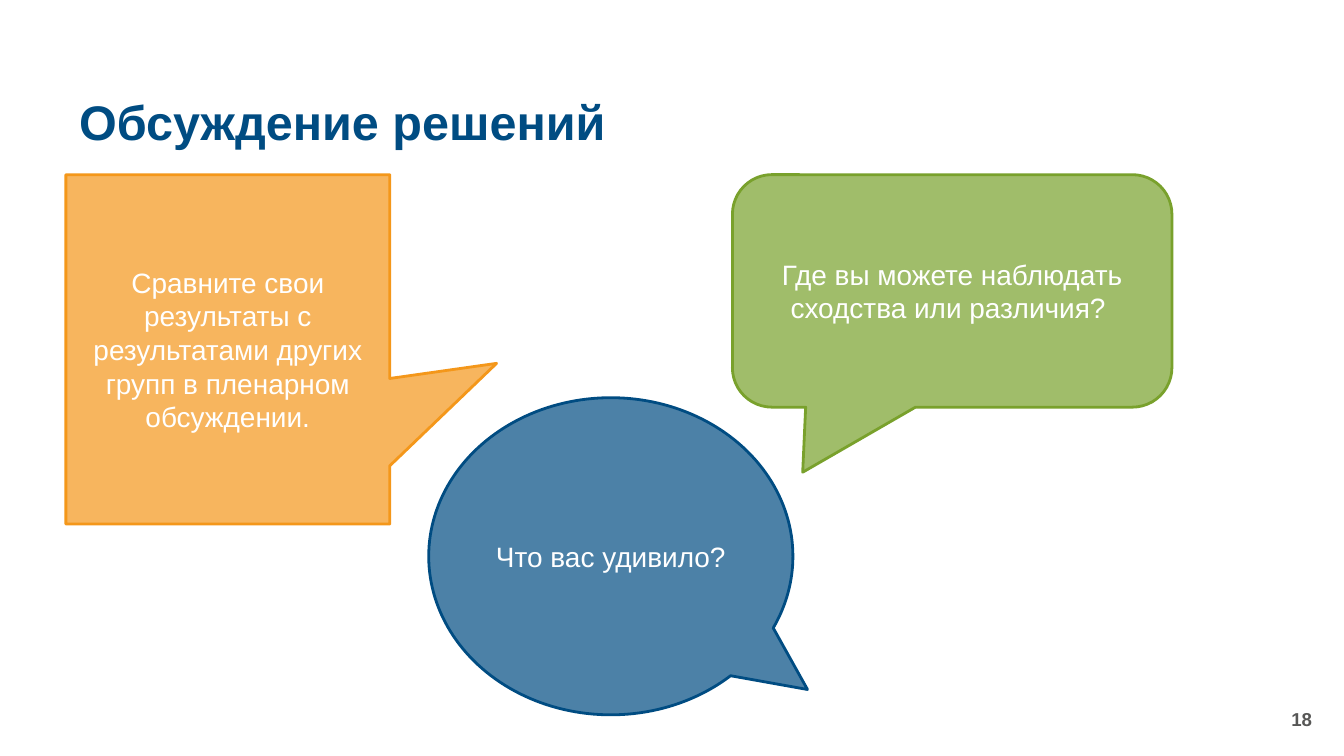
from lxml import etree
from pptx import Presentation
from pptx.dml.color import RGBColor
from pptx.enum.shapes import MSO_SHAPE
from pptx.enum.text import MSO_ANCHOR, PP_ALIGN
from pptx.oxml.ns import qn
from pptx.util import Inches, Pt

ELLIPSE = MSO_SHAPE.OVAL_CALLOUT
ROUNDED = MSO_SHAPE.ROUNDED_RECTANGULAR_CALLOUT
RECTANGLE = MSO_SHAPE.RECTANGULAR_CALLOUT
MIDDLE = MSO_ANCHOR.MIDDLE
LEFT, CENTER, RIGHT = PP_ALIGN.LEFT, PP_ALIGN.CENTER, PP_ALIGN.RIGHT

BLUE = RGBColor(0x00, 0x4C, 0x82)
GREEN = RGBColor(0x79, 0xA1, 0x2C)
ORANGE = RGBColor(0xF4, 0x97, 0x1A)
GRAY = RGBColor(0x57, 0x57, 0x56)
WHITE = RGBColor(0xFF, 0xFF, 0xFF)

FONT = "Arial"
SLIDE_WIDTH = 10
MARGIN = 0.49
TOP = 1.3
OPACITY = 70


def write_text(shape, text, size, color, alignment, bold=False):
    """Put one middle-anchored paragraph into a shape and return it."""
    frame = shape.text_frame
    frame.word_wrap = True
    frame.vertical_anchor = MIDDLE
    paragraph = frame.paragraphs[0]
    paragraph.alignment = alignment
    run = paragraph.add_run()
    run.text = text
    run.font.name = FONT
    run.font.size = Pt(size)
    run.font.bold = bold
    run.font.color.rgb = color
    return paragraph


def add_label(slide, box, text, size, color, alignment):
    """Add a bold text box and return its paragraph."""
    shape = slide.shapes.add_textbox(*map(Inches, box))
    return write_text(shape, text, size, color, alignment, bold=True)


def add_callout(slide, kind, box, adjustments, color, text):
    """Add a translucent speech bubble with an opaque outline."""
    shape = slide.shapes.add_shape(kind, *map(Inches, box))
    shape.shadow.inherit = False
    for index, value in enumerate(adjustments):
        shape.adjustments[index] = value
    shape.fill.solid()
    shape.fill.fore_color.rgb = color
    fill_color = shape.fill._xPr.find(qn("a:solidFill"))[0]
    etree.SubElement(fill_color, qn("a:alpha")).set("val", str(OPACITY * 1000))
    shape.line.color.rgb = color
    shape.line.width = Pt(1.5)
    write_text(shape, text, 15, WHITE, CENTER)


def main():
    """Build and save the discussion slide."""
    presentation = Presentation()
    presentation.slide_width = Inches(SLIDE_WIDTH)
    presentation.slide_height = Inches(SLIDE_WIDTH * 9 / 16)
    slide = presentation.slides.add_slide(presentation.slide_layouts[6])

    title = add_label(slide, (MARGIN, 0.63, 9.37, 0.59),
                      "Обсуждение решений", 26, BLUE, LEFT)
    title.line_spacing = 0.9
    add_label(slide, (7.61, 5.2, 2.25, 0.3), "18", 10, GRAY, RIGHT)

    add_callout(slide, ELLIPSE, (3.19, 2.96, 2.71, 2.36), (0.54, 0.42), BLUE,
                "Что вас удивило? ")
    add_callout(slide, ROUNDED, (5.45, TOP, 3.27, 1.73), (-0.34, 0.78, 0.17), GREEN,
                "Где вы можете наблюдать сходства или различия? ")
    add_callout(slide, RECTANGLE, (MARGIN, TOP, 2.41, 2.6), (0.83, 0.04), ORANGE,
                "Сравните свои результаты с результатами других групп "
                "в пленарном обсуждении.")

    presentation.save("out.pptx")


if __name__ == "__main__":
    main()
